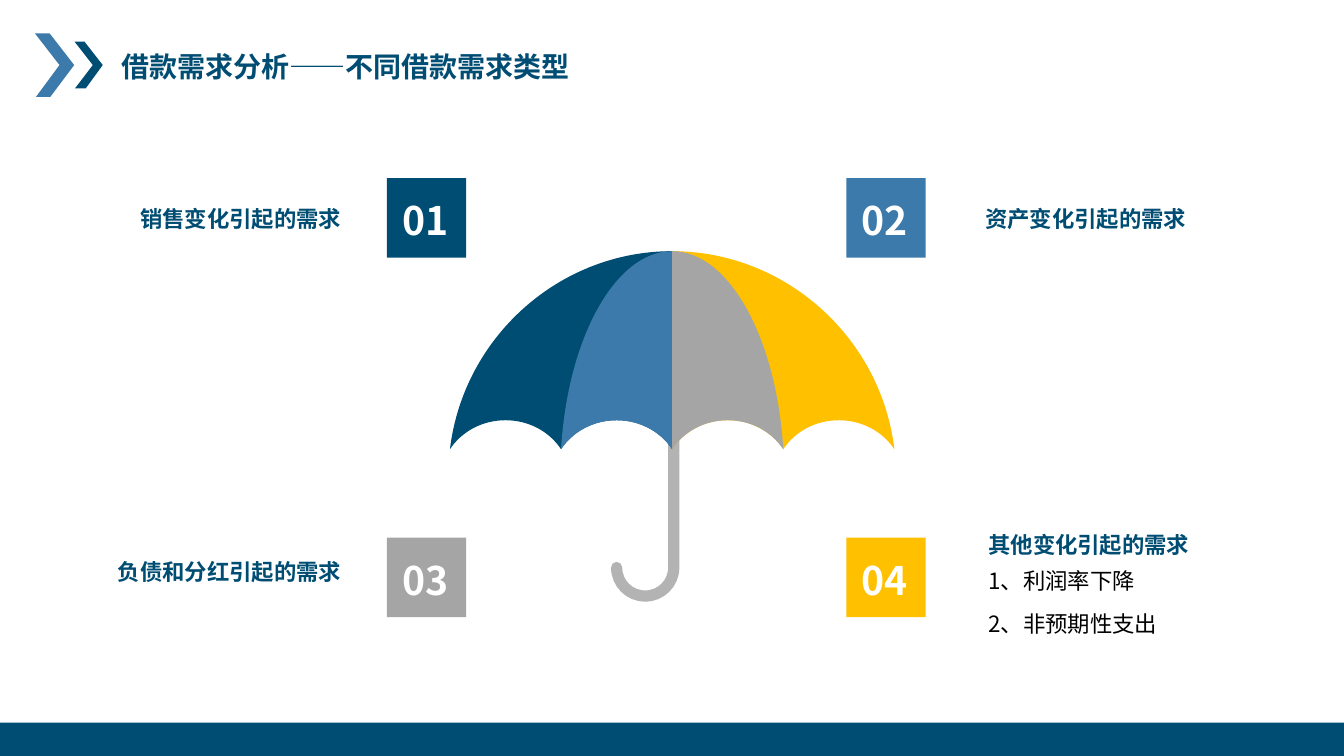
from lxml import etree
from pptx import Presentation
from pptx.dml.color import RGBColor
from pptx.enum.shapes import MSO_SHAPE
from pptx.enum.text import MSO_ANCHOR, MSO_AUTO_SIZE, PP_ALIGN
from pptx.oxml.ns import qn
from pptx.util import Cm, Pt

RECTANGLE, ROUNDED = MSO_SHAPE.RECTANGLE, MSO_SHAPE.ROUNDED_RECTANGLE
TOP, MIDDLE = MSO_ANCHOR.TOP, MSO_ANCHOR.MIDDLE
LEFT, CENTER, RIGHT = PP_ALIGN.LEFT, PP_ALIGN.CENTER, PP_ALIGN.RIGHT

NAVY = RGBColor(0x00, 0x4D, 0x73)
BLUE = RGBColor(0x3C, 0x7A, 0xAB)
GRAY = RGBColor(0xA5, 0xA5, 0xA5)
GOLD = RGBColor(0xFF, 0xC0, 0x00)
HANDLE_GRAY = RGBColor(0xB3, 0xB3, 0xB3)
WHITE = RGBColor(0xFF, 0xFF, 0xFF)
BLACK = RGBColor(0x00, 0x00, 0x00)
SANS, LATO = "Noto Sans CJK SC", "Lato"

deck = Presentation()
deck.slide_width, deck.slide_height = Cm(33.87), Cm(19.05)
page = deck.slides.add_slide(deck.slide_layouts[1])


def draw_outline(start, segments, color, closed=True):
    """Draw an outline; a segment of one point is a line, of three a curve."""
    builder = page.shapes.build_freeform(Cm(start[0]), Cm(start[1]), scale=1.0)
    builder.add_line_segments(
        [(Cm(x), Cm(y)) for segment in segments for x, y in segment], close=closed)
    shape = builder.convert_to_shape()
    lines = iter(list(shape._element.iter(qn("a:lnTo"))))
    for segment in segments:
        steps = [next(lines) for _ in segment]
        if len(steps) == 3:
            curve = etree.Element(qn("a:cubicBezTo"))
            steps[0].addprevious(curve)
            for step in steps:
                curve.append(step[0])
                step.getparent().remove(step)
    shape.shadow.inherit = False
    if closed:
        shape.fill.solid()
        shape.fill.fore_color.rgb = color
        shape.line.fill.background()
    else:
        shape.fill.background()
        shape.line.color.rgb = color
    return shape


def write(frame, lines, size, color, bold, font=SANS, align=LEFT,
          anchor=TOP, insets=(0, 0.28, 0, 0.28), spacing=1.0, before=0):
    """Fill a text frame with one formatted paragraph per line."""
    frame.word_wrap = True
    frame.auto_size = MSO_AUTO_SIZE.NONE
    frame.vertical_anchor = anchor
    (frame.margin_left, frame.margin_top,
     frame.margin_right, frame.margin_bottom) = map(Cm, insets)
    for index, line in enumerate(lines):
        para = frame.add_paragraph() if index else frame.paragraphs[0]
        para.alignment = align
        para.line_spacing = spacing
        para.space_before = Pt(before)
        span = para.add_run()
        span.text = line
        span.font.name = font
        span.font.size = Pt(size)
        span.font.bold = bold
        span.font.color.rgb = color
        east_asian = etree.SubElement(span.font._element, qn("a:ea"))
        east_asian.set("typeface", SANS)


# Header chevrons
for color, corners in (
    (BLUE, [(0.88, 0.84), (1.25, 0.84), (1.87, 1.64), (1.27, 2.44), (0.91, 2.44), (1.5, 1.64)]),
    (NAVY, [(1.88, 1.05), (2.13, 1.05), (2.59, 1.64), (2.16, 2.23), (1.89, 2.23), (2.34, 1.64)]),
):
    draw_outline(corners[0], [[corner] for corner in corners[1:]], color)

# Footer band
band = page.shapes.add_shape(RECTANGLE, 0, Cm(18.21), deck.slide_width, Cm(0.84))
band.shadow.inherit = False
band.fill.solid()
band.fill.fore_color.rgb = NAVY
band.line.fill.background()

# Title
title = page.shapes.title
title.left, title.top, title.width, title.height = Cm(2.8), Cm(1.12), Cm(12.55), Cm(1.12)
write(title.text_frame, ["借款需求分析——不同借款需求类型"], 20, NAVY, True,
      insets=(0.25, 0.13, 0.25, 0.13))

# Umbrella handle: two quarter turns of the hook, then the straight pole
hook_x, hook_y, reach, pull = 16.26, 14.3, 0.72, 0.4
handle = draw_outline((hook_x - reach, hook_y), [
    [(hook_x - reach, hook_y + pull), (hook_x - pull, hook_y + reach), (hook_x, hook_y + reach)],
    [(hook_x + pull, hook_y + reach), (hook_x + reach, hook_y + pull), (hook_x + reach, hook_y)],
    [(hook_x + reach, 8.59)],
], HANDLE_GRAY, closed=False)
handle.line.width = Pt(8)
handle.line._ln.set("cap", "rnd")

# Umbrella canopy: two wide halves behind, two narrow panels in front
tip_x, tip_y, rim_y, arch_y = 16.94, 6.33, 11.32, 10.59
panel_width = 2.8
for side, panels, color in ((1, 2, GOLD), (-1, 2, NAVY), (-1, 1, BLUE), (1, 1, GRAY)):
    segments = [[(tip_x, rim_y)]]
    for panel in range(panels):
        near = tip_x + side * panel_width * panel
        middle = near + side * panel_width / 2
        far = near + side * panel_width
        segments.append([(near + side * 0.3, 10.87), (middle - side * 0.58, arch_y),
                         (middle, arch_y)])
        segments.append([(middle + side * 0.58, arch_y), (far - side * 0.3, 10.87),
                         (far, rim_y)])
    span_x = side * panel_width * panels
    segments.append([(tip_x + span_x * 0.94, 8.51), (tip_x + span_x * 0.51, tip_y),
                     (tip_x, tip_y)])
    draw_outline((tip_x, tip_y), segments, color)

# Numbered squares
for index, color in enumerate((NAVY, BLUE, GRAY, GOLD)):
    row, column = divmod(index, 2)
    left, top = 9.75 + 11.58 * column, 4.49 + 9.06 * row
    square = page.shapes.add_shape(ROUNDED, Cm(left), Cm(top), Cm(2), Cm(2))
    square.adjustments[0] = 0
    square.shadow.inherit = False
    square.fill.solid()
    square.fill.fore_color.rgb = color
    square.line.fill.background()
    number = page.shapes.add_textbox(Cm(left + 0.15), Cm(top + 0.26), Cm(1.63), Cm(1.35))
    write(number.text_frame, [f"{index + 1:02d}"], 28, WHITE, True, align=CENTER,
          anchor=MIDDLE, spacing=1.2)

# Labels
for text, left, top, width, height, align, spacing in (
    ("其他变化引起的需求", 24.91, 12.96, 6.35, 1.4, LEFT, 1.2),
    ("销售变化引起的需求", 3.22, 4.9, 5.38, 1.14, RIGHT, 1.0),
    ("负债和分红引起的需求", 2.07, 13.79, 6.53, 1.14, RIGHT, 1.0),
    ("资产变化引起的需求", 24.83, 4.9, 5.77, 1.14, LEFT, 1.0),
):
    box = page.shapes.add_textbox(Cm(left), Cm(top), Cm(width), Cm(height))
    write(box.text_frame, [text], 16, NAVY, True, font=LATO, align=align, spacing=spacing)

# Details of the fourth type
details = page.placeholders[1]
details.left, details.top, details.width, details.height = Cm(24.91), Cm(14.16), Cm(6.35), Cm(1.63)
write(details.text_frame, ["1、利润率下降", "2、非预期性支出"], 16, BLACK, False,
      insets=(0, 0, 0, 0), spacing=1.2, before=7.4)
for para in details.text_frame.paragraphs:
    properties = para._p.get_or_add_pPr()
    properties.set("marL", "0")
    properties.set("indent", "0")
    etree.SubElement(properties, qn("a:buNone"))

deck.save("out.pptx")
